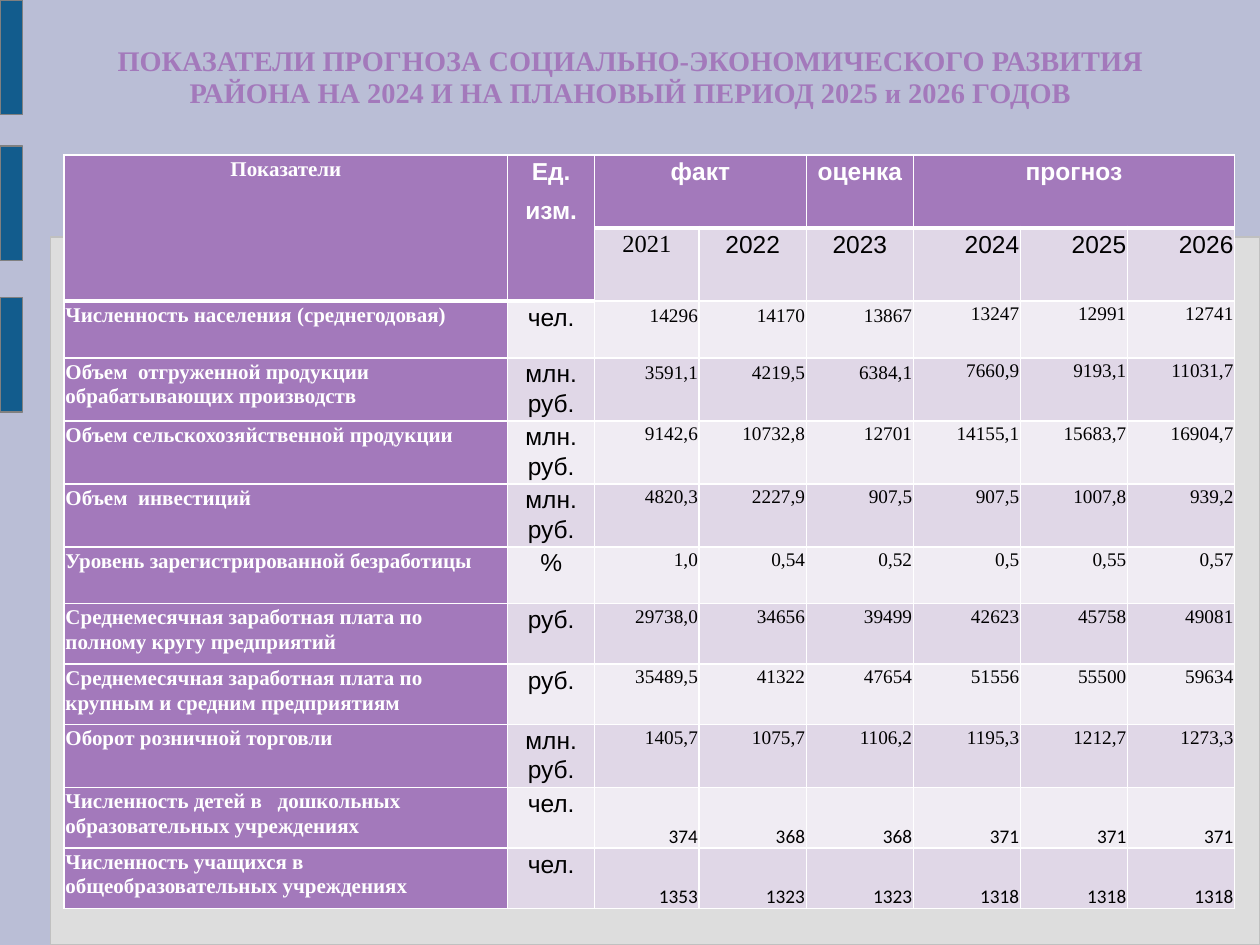
"""Build the slide with the district's socio-economic forecast table."""
from dataclasses import dataclass, replace

from lxml.etree import SubElement
from pptx import Presentation
from pptx.dml.color import RGBColor
from pptx.enum.shapes import MSO_SHAPE as Shape
from pptx.enum.text import MSO_ANCHOR as Anchor, MSO_AUTO_SIZE as AutoSize, PP_ALIGN as Align
from pptx.oxml.ns import qn
from pptx.util import Inches, Pt

BACKGROUND = RGBColor(0xBA, 0xBE, 0xD6)
PANEL = RGBColor(0xDD, 0xDD, 0xDD)
PANEL_EDGE = RGBColor(0xC0, 0xC0, 0xC0)
BLUE = RGBColor(0x12, 0x5C, 0x8D)
GRAY = RGBColor(0x80, 0x80, 0x80)
PURPLE = RGBColor(0xA3, 0x79, 0xBB)
DARK_BAND = RGBColor(0xE0, 0xD7, 0xE7)
LIGHT_BAND = RGBColor(0xF0, 0xEC, 0xF3)
WHITE = RGBColor(0xFF, 0xFF, 0xFF)
BLACK = RGBColor(0, 0, 0)
SERIF = "Times New Roman"


@dataclass(frozen=True)
class CellStyle:
    font: str
    size: float
    color: RGBColor = BLACK
    bold: bool = False
    align: Align = Align.CENTER
    line: float = 1.06
    gap: float = 3
    anchor: Anchor = Anchor.TOP
    bottom: float = 0.01


@dataclass(frozen=True)
class Indicator:
    name: str
    unit: str
    values: str


@dataclass(frozen=True)
class HeaderGroup:
    text: str
    column: int
    rows: int
    columns: int


HEADER = CellStyle("Arial", 14, WHITE, True)
CORNER = replace(HEADER, font=SERIF, size=12)
LABEL = replace(CORNER, align=Align.LEFT)
UNIT = CellStyle("Arial", 14)
NUMBER = CellStyle(SERIF, 11, align=Align.RIGHT)
LOOSE_NUMBER = replace(NUMBER, line=1.15)
PUPILS = replace(NUMBER, font="Calibri", line=0.93, gap=0, anchor=Anchor.BOTTOM, bottom=0)

TITLE = ("ПОКАЗАТЕЛИ ПРОГНОЗА СОЦИАЛЬНО-ЭКОНОМИЧЕСКОГО РАЗВИТИЯ "
         "РАЙОНА НА 2024 И НА ПЛАНОВЫЙ ПЕРИОД 2025 и 2026 ГОДОВ")
GROUPS = [
    HeaderGroup("Показатели", 0, 2, 1),
    HeaderGroup("Ед.\nизм.", 1, 2, 1),
    HeaderGroup("факт", 2, 1, 2),
    HeaderGroup("оценка", 4, 1, 1),
    HeaderGroup("прогноз", 5, 1, 3),
]
INDICATORS = [
    Indicator("Численность населения (среднегодовая)", "чел.",
              "14296 14170 13867 13247 12991 12741"),
    Indicator("Объем  отгруженной продукции обрабатывающих производств", "млн. руб.",
              "3591,1 4219,5 6384,1 7660,9 9193,1 11031,7"),
    Indicator("Объем сельскохозяйственной продукции", "млн. руб.",
              "9142,6 10732,8 12701 14155,1 15683,7 16904,7"),
    Indicator("Объем  инвестиций", "млн. руб.", "4820,3 2227,9 907,5 907,5 1007,8 939,2"),
    Indicator("Уровень зарегистрированной безработицы", "%", "1,0 0,54 0,52 0,5 0,55 0,57"),
    Indicator("Среднемесячная заработная плата по полному кругу предприятий", "руб.",
              "29738,0 34656 39499 42623 45758 49081"),
    Indicator("Среднемесячная заработная плата по крупным и средним предприятиям", "руб.",
              "35489,5 41322 47654 51556 55500 59634"),
    Indicator("Оборот розничной торговли", "млн. руб.",
              "1405,7 1075,7 1106,2 1195,3 1212,7 1273,3"),
    Indicator("Численность детей в   дошкольных образовательных учреждениях", "чел.",
              "374 368 368 371 371 371"),
    Indicator("Численность учащихся в общеобразовательных учреждениях", "чел.",
              "1353 1323 1323 1318 1318 1318"),
]
COLUMN_WIDTHS = [3.52, 0.69, 0.83] + [0.85] * 5
ROW_HEIGHTS = [0.58, 0.58, 0.45, 0.5, 0.5, 0.5, 0.45, 0.48, 0.48, 0.5, 0.48, 0.48]


def add_block(page, left: float, top: float, width: float, height: float,
              fill: RGBColor, edge: RGBColor) -> None:
    """Draw one decorative block with a thin outline."""
    block = page.shapes.add_shape(Shape.ROUNDED_RECTANGLE, Inches(left), Inches(top),
                                  Inches(width), Inches(height))
    block.adjustments[0] = 0
    block.shadow.inherit = False
    block.fill.solid()
    block.fill.fore_color.rgb = fill
    block.line.color.rgb = edge
    block.line.width = Pt(0.75)


def add_span(para, text: str, font: str, size: float, color: RGBColor, bold: bool) -> None:
    """Add one formatted run to a paragraph."""
    span = para.add_run()
    span.text = text
    span.font.name = font
    span.font.size = Pt(size)
    span.font.bold = bold
    span.font.color.rgb = color


def write_cell(cell, text: str, style: CellStyle) -> None:
    """Write the lines of a cell as paragraphs."""
    cell.margin_left = cell.margin_right = cell.margin_top = Inches(0.01)
    cell.margin_bottom = Inches(style.bottom)
    cell.vertical_anchor = style.anchor
    frame = cell.text_frame
    for index, line in enumerate(text.split("\n")):
        para = frame.add_paragraph() if index else frame.paragraphs[0]
        para.alignment = style.align
        para.line_spacing = style.line
        para.space_before = para.space_after = Pt(style.gap)
        add_span(para, line, style.font, style.size, style.color, style.bold)


def paint_cell(cell, fill: RGBColor, top: float, bottom: float) -> None:
    """Give a cell white borders and a solid fill."""
    props = cell._tc.get_or_add_tcPr()
    for side, width in (("L", 1), ("R", 1), ("T", top), ("B", bottom)):
        border = SubElement(props, qn(f"a:ln{side}"), w=str(Pt(width)))
        paint = SubElement(border, qn("a:solidFill"))
        SubElement(paint, qn("a:srgbClr"), val=str(WHITE))
    cell.fill.solid()
    cell.fill.fore_color.rgb = fill


def number_style(row: int, column: int) -> CellStyle:
    """Choose the style of a value by its place in the table."""
    if row >= 10:
        return PUPILS
    return LOOSE_NUMBER if row <= 3 and column <= 4 else NUMBER


def add_forecast_table(page) -> None:
    """Add the table of indicators."""
    frame = page.shapes.add_table(len(ROW_HEIGHTS), len(COLUMN_WIDTHS), Inches(0.51), Inches(1.23),
                                  Inches(sum(COLUMN_WIDTHS)), Inches(sum(ROW_HEIGHTS)))
    table = frame.table
    table.first_row = table.horz_banding = False
    for column, width in zip(table.columns, COLUMN_WIDTHS):
        column.width = Inches(width)
    for row, height in zip(table.rows, ROW_HEIGHTS):
        row.height = Inches(height)
    for row in range(len(ROW_HEIGHTS)):
        band = LIGHT_BAND if row % 2 == 0 else DARK_BAND
        for column in range(len(COLUMN_WIDTHS)):
            header_rows = 2 if column < 2 else 1
            fill = PURPLE if row < header_rows or column == 0 else band
            paint_cell(table.cell(row, column), fill, 3 if row == header_rows else 1,
                       3 if row < header_rows else 1)
    for group in GROUPS:
        cell = table.cell(0, group.column)
        if group.rows * group.columns > 1:
            cell.merge(table.cell(group.rows - 1, group.column + group.columns - 1))
        write_cell(cell, group.text, HEADER if group.column else CORNER)
    for column, year in enumerate(range(2021, 2027), start=2):
        style = replace(UNIT, font=SERIF if column == 2 else "Arial",
                        align=Align.CENTER if column < 5 else Align.RIGHT)
        write_cell(table.cell(1, column), str(year), style)
    for row, indicator in enumerate(INDICATORS, start=2):
        write_cell(table.cell(row, 0), indicator.name, LABEL)
        write_cell(table.cell(row, 1), indicator.unit, UNIT)
        for column, value in enumerate(indicator.values.split(), start=2):
            write_cell(table.cell(row, column), value, number_style(row, column))


def format_title(title) -> None:
    """Place and fill the slide title."""
    title.left, title.top, title.width, title.height = map(Inches, (0.5, 0.37, 9, 0.78))
    frame = title.text_frame
    frame.auto_size = AutoSize.NONE
    frame.word_wrap = True
    frame.vertical_anchor = Anchor.TOP
    frame.margin_left = frame.margin_right = frame.margin_top = frame.margin_bottom = 0
    para = frame.paragraphs[0]
    para.alignment = Align.CENTER
    para.line_spacing = 0.93
    add_span(para, TITLE, SERIF, 16.2, PURPLE, True)


def main() -> None:
    """Build and save the deck."""
    deck = Presentation()
    deck.slide_width, deck.slide_height = Inches(10), Inches(7.5)
    page = deck.slides.add_slide(deck.slide_layouts[5])
    page.background.fill.solid()
    page.background.fill.fore_color.rgb = BACKGROUND
    add_block(page, 0.4, 1.88, 9.6, 5.62, PANEL, PANEL_EDGE)
    for top in (0, 1.16, 2.36):
        add_block(page, 0, top, 0.18, 0.91, BLUE, GRAY)
    add_forecast_table(page)
    format_title(page.shapes.title)
    deck.save("out.pptx")


if __name__ == "__main__":
    main()
